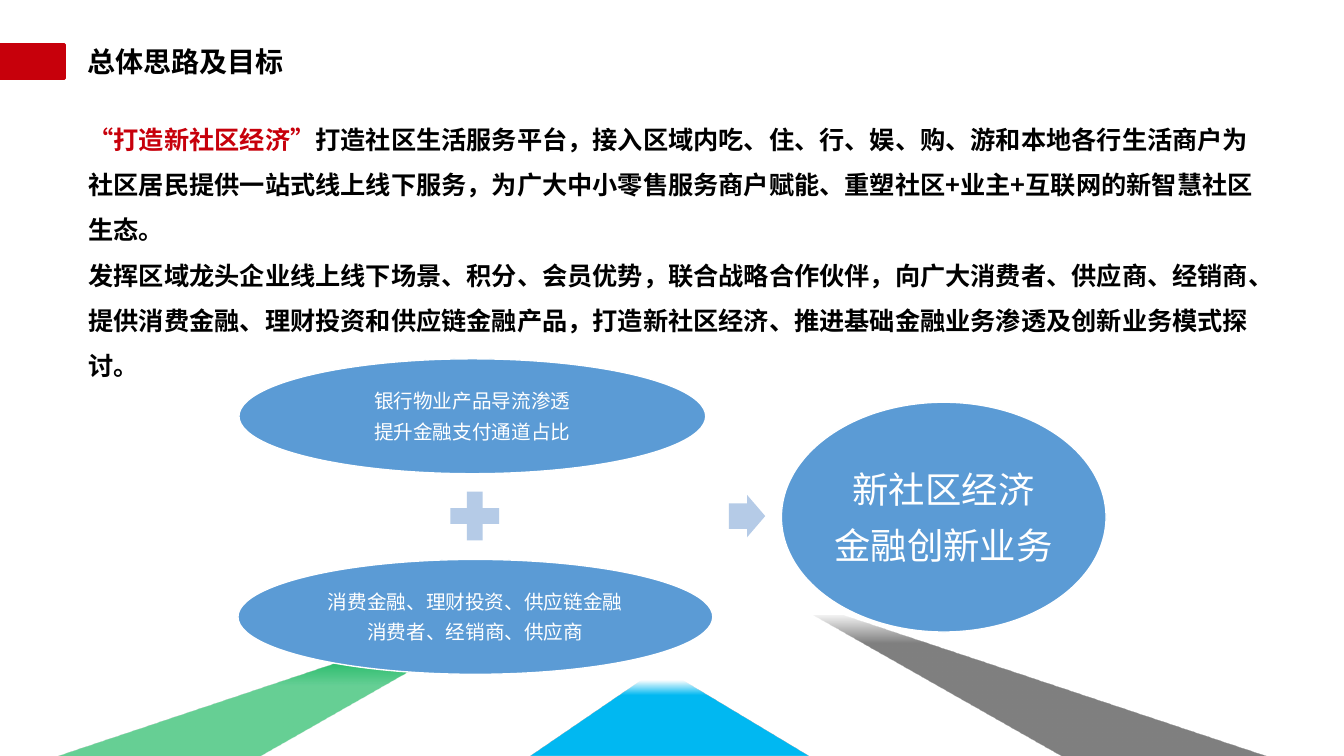
from lxml import etree
from pptx import Presentation
from pptx.dml.color import RGBColor
from pptx.enum.shapes import MSO_SHAPE
from pptx.enum.text import MSO_ANCHOR, PP_ALIGN
from pptx.oxml.ns import qn
from pptx.util import Inches, Pt

RED = RGBColor(0xC7, 0x00, 0x0B)
BLACK = RGBColor(0, 0, 0)
WHITE = RGBColor(0xFF, 0xFF, 0xFF)
BLUE = RGBColor(0x5B, 0x9B, 0xD5)
PALE_BLUE = RGBColor(0xB5, 0xCB, 0xE7)
CYAN = RGBColor(0x00, 0xB9, 0xF2)
GREEN = RGBColor(0x00, 0xB0, 0x50)
GRAY = RGBColor(0x80, 0x80, 0x80)
RECT, OVAL = MSO_SHAPE.RECTANGLE, MSO_SHAPE.OVAL
PLUS, ARROW = MSO_SHAPE.MATH_PLUS, MSO_SHAPE.RIGHT_ARROW
CENTER, MIDDLE = PP_ALIGN.CENTER, MSO_ANCHOR.MIDDLE
FONT = "Noto Sans CJK SC"


def add_run(paragraph, text, size, color, bold=False):
    run = paragraph.add_run()
    run.text = text
    run.font.name, run.font.size = FONT, Pt(size)
    run.font.bold, run.font.color.rgb = bold, color
    etree.SubElement(run.font._element, qn("a:ea"), typeface=FONT)


class StrategySlide:
    """Draws styled elements on one slide."""

    def __init__(self, slide):
        self.shapes = slide.shapes

    def ray(self, points, color, stops):
        (start, *rest) = [(Inches(x), Inches(y)) for x, y in points]
        builder = self.shapes.build_freeform(*start)
        builder.add_line_segments(rest, close=True)
        ray = builder.convert_to_shape()
        ray.shadow.inherit = False
        ray.line.fill.background()
        ray.fill.gradient()
        ray.fill.gradient_angle = 270
        stop_list = next(ray._element.iter(qn("a:gsLst")))
        for old_stop in list(stop_list):
            stop_list.remove(old_stop)
        for position, opacity in stops:
            stop = etree.SubElement(stop_list, qn("a:gs"), pos=str(position * 1000))
            tint = etree.SubElement(stop, qn("a:srgbClr"), val=str(color))
            etree.SubElement(tint, qn("a:alpha"), val=str(opacity * 1000))

    def shape(self, kind, box, fill, line=None, line_width=1):
        shape = self.shapes.add_shape(kind, *map(Inches, box))
        shape.shadow.inherit = False
        shape.fill.solid()
        shape.fill.fore_color.rgb = fill
        if line is None:
            shape.line.fill.background()
        else:
            shape.line.color.rgb = line
            shape.line.width = Pt(line_width)
        return shape

    def oval(self, box, lines, size, inset):
        frame = self.shape(OVAL, box, BLUE, WHITE).text_frame
        frame.word_wrap, frame.vertical_anchor = True, MIDDLE
        frame.margin_left = frame.margin_right = Inches(inset)
        frame.margin_top = frame.margin_bottom = Inches(inset)
        for index, line in enumerate(lines):
            paragraph = frame.add_paragraph() if index else frame.paragraphs[0]
            paragraph.alignment = CENTER
            after = etree.SubElement(paragraph._p.get_or_add_pPr(), qn("a:spcAft"))
            etree.SubElement(after, qn("a:spcPct"), val="35000")
            add_run(paragraph, line, size, WHITE)

    def text(self, box, paragraphs, size, spacing=None):
        frame = self.shapes.add_textbox(*map(Inches, box)).text_frame
        frame.word_wrap = True
        for index, runs in enumerate(paragraphs):
            paragraph = frame.add_paragraph() if index else frame.paragraphs[0]
            paragraph.line_spacing = spacing
            for words, color in runs:
                add_run(paragraph, words, size, color, bold=True)


def main():
    deck = Presentation()
    deck.slide_width, deck.slide_height = Inches(13.33), Inches(7.5)
    page = StrategySlide(deck.slides.add_slide(deck.slide_layouts[6]))

    page.ray([(6.36, 6.75), (5.26, 7.5), (8.02, 7.5), (6.77, 6.75)],
             CYAN, [(0, 0), (20, 100), (100, 100)])
    page.ray([(4.71, 6.12), (0.52, 7.51), (2.55, 7.51), (5.01, 6.12)],
             GREEN, [(0, 81), (20, 100), (49, 60), (100, 60)])
    page.ray([(8.37, 6.11), (12.56, 7.5), (10.53, 7.5), (8.07, 6.11)],
             GRAY, [(0, 10), (20, 100), (100, 100)])

    page.text((0.78, 1.03, 11.78, 2.76), [
        [("“打造新社区经济”", RED),
         ("打造社区生活服务平台，接入区域内吃、住、行、娱、购、游和本地各行生活商户为"
          "社区居民提供一站式线上线下服务，为广大中小零售服务商户赋能、"
          "重塑社区+业主+互联网的新智慧社区生态。", BLACK)],
        [("发挥区域龙头企业线上线下场景、积分、会员优势，联合战略合作伙伴，"
          "向广大消费者、供应商、经销商、提供消费金融、理财投资和供应链金融产品，"
          "打造新社区经济、推进基础金融业务渗透及创新业务模式探讨。", BLACK)],
    ], 18, spacing=1.5)
    page.shape(RECT, (0, 0.44, 0.64, 0.34), RED, RED, 2)
    page.text((0.77, 0.39, 7.01, 0.44), [[("总体思路及目标", BLACK)]], 20)

    page.oval((2.37, 3.56, 4.63, 1.14),
              ["银行物业产品导流渗透", "提升金融支付通道占比"], 14, 0.02)
    page.shape(PLUS, (4.38, 4.79, 0.66, 0.66), PALE_BLUE)
    page.oval((2.36, 5.55, 4.71, 1.14),
              ["消费金融、理财投资、供应链金融", "消费者、经销商、供应商"], 14, 0.02)
    arrow = page.shape(ARROW, (7.23, 4.91, 0.36, 0.42), PALE_BLUE)
    arrow.adjustments[0] = 0.6
    page.oval((7.75, 3.99, 3.22, 2.28), ["新社区经济", "金融创新业务"], 26, 0.04)

    deck.save("out.pptx")


if __name__ == "__main__":
    main()
